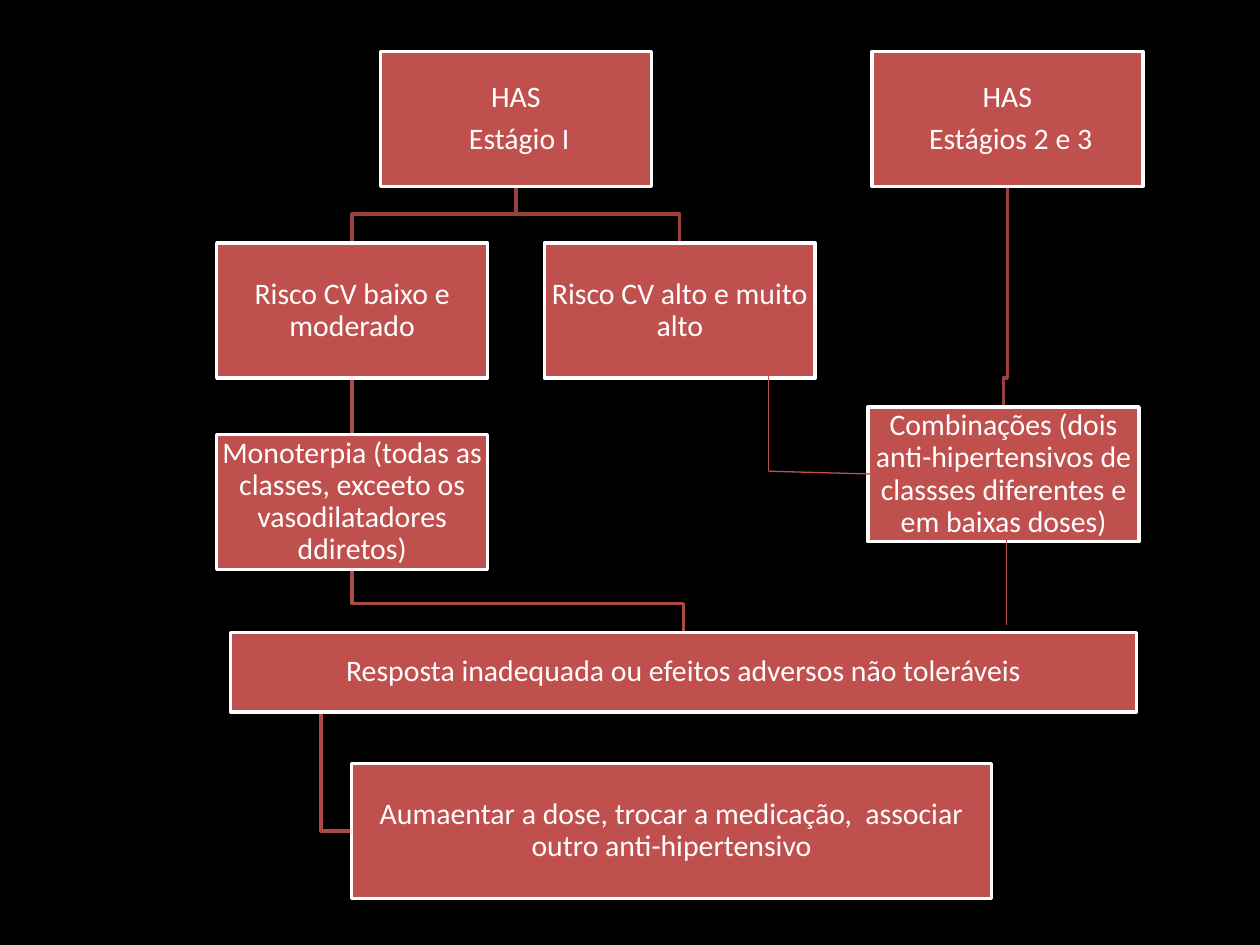
import pptx
import pptx.dml.color
import pptx.enum.shapes
import pptx.enum.text
import pptx.oxml.ns
import pptx.util
from lxml import etree

Inches = pptx.util.Inches
COLORS = {"background": "000000", "box": "C0504D", "white": "FFFFFF",
          "upper_link": "9A403E", "lower_link": "AE4946"}
BOX_W, BOX_H = 2.15, 1.07
BEND_GAP = 0.23

# name: ((left, top, width, height), paragraphs)
BOXES = {
    "stage_1": ((3.02, 0.41, BOX_W, BOX_H), ["HAS", " Estágio I"]),
    "low_risk": ((1.72, 1.93, BOX_W, BOX_H), ["Risco CV baixo e moderado"]),
    "monotherapy": ((1.72, 3.45, BOX_W, BOX_H),
                    ["Monoterpia (todas as classes, exceeto os vasodilatadores ddiretos)"]),
    "response": ((1.83, 5.02, 7.19, 0.63),
                 ["Resposta inadequada ou efeitos adversos não toleráveis"]),
    "action": ((2.79, 6.06, 5.08, BOX_H),
               ["Aumaentar a dose, trocar a medicação,  associar outro anti-hipertensivo"]),
    "high_risk": ((4.32, 1.93, BOX_W, BOX_H), ["Risco CV alto e muito alto"]),
    "stages_2_3": ((6.92, 0.41, BOX_W, BOX_H), ["HAS", " Estágios 2 e 3"]),
    "combinations": ((6.89, 3.23, BOX_W, BOX_H),
                     ["Combinações (dois anti-hipertensivos de classses diferentes e em baixas doses)"]),
}


def rgb(name):
    return pptx.dml.color.RGBColor.from_string(COLORS[name])


def write_text(frame, paragraphs, font="Calibri", size=17, color="white", inset=0.01):
    frame.word_wrap = True
    frame.vertical_anchor = pptx.enum.text.MSO_ANCHOR.MIDDLE
    frame.margin_left = frame.margin_right = Inches(inset)
    frame.margin_top = frame.margin_bottom = Inches(inset)
    for index, content in enumerate(paragraphs):
        paragraph = frame.add_paragraph() if index else frame.paragraphs[0]
        paragraph.alignment = pptx.enum.text.PP_ALIGN.CENTER
        paragraph.line_spacing = 0.9
        paragraph.space_after = pptx.util.Pt(0.35 * size)
        run = paragraph.add_run()
        run.text = content
        run.font.name = font
        run.font.size = pptx.util.Pt(size)
        run.font.color.rgb = rgb(color)


def bottom_center(name):
    left, top, width, height = BOXES[name][0]
    return left + width / 2, top + height


def top_center(name):
    left, top, width, _ = BOXES[name][0]
    return left + width / 2, top


class Flowchart:
    def __init__(self, slide):
        self.slide = slide
        slide.background.fill.solid()
        slide.background.fill.fore_color.rgb = rgb("background")

    def stroke(self, item, color, width):
        item.line.color.rgb = rgb(color)
        item.line.width = pptx.util.Pt(width)

    def box(self, bounds, paragraphs):
        rectangle = self.slide.shapes.add_shape(
            pptx.enum.shapes.MSO_SHAPE.RECTANGLE, *map(Inches, bounds))
        rectangle.shadow.inherit = False
        rectangle.fill.solid()
        rectangle.fill.fore_color.rgb = rgb("box")
        self.stroke(rectangle, "white", 2)
        write_text(rectangle.text_frame, paragraphs)
        return rectangle

    def bent_line(self, points, color):
        start, *rest = [tuple(map(Inches, point)) for point in points]
        builder = self.slide.shapes.build_freeform(*start)
        builder.add_line_segments(rest, close=False)
        bend = builder.convert_to_shape()
        bend.shadow.inherit = False
        bend.fill.background()
        self.stroke(bend, color, 2)

    def elbow(self, parent, child, color):
        """Go down from parent, sideways just above child, then down to child."""
        start, end = bottom_center(parent), top_center(child)
        bend_y = end[1] - BEND_GAP
        self.bent_line([start, (start[0], bend_y), (end[0], bend_y), end], color)

    def straight(self, start, end, color, width):
        link = self.slide.shapes.add_connector(
            pptx.enum.shapes.MSO_CONNECTOR.STRAIGHT, *map(Inches, (*start, *end)))
        self.stroke(link, color, width)
        etree.SubElement(link._element.spPr, pptx.oxml.ns.qn("a:effectLst"))
        return link


def main():
    deck = pptx.Presentation()
    deck.slide_width, deck.slide_height = Inches(10), Inches(7.5)
    chart = Flowchart(deck.slides.add_slide(deck.slide_layouts[6]))

    chart.elbow("stages_2_3", "combinations", "upper_link")
    chart.elbow("stage_1", "high_risk", "upper_link")
    left, top, width, height = BOXES["response"][0]
    action_left, action_top, _, action_height = BOXES["action"][0]
    trunk_x, action_y = left + width / 10, action_top + action_height / 2
    chart.bent_line([(trunk_x, top + height), (trunk_x, action_y), (action_left, action_y)],
                    "lower_link")
    chart.elbow("monotherapy", "response", "lower_link")
    therapy_link = chart.straight(bottom_center("low_risk"), top_center("monotherapy"),
                                  "lower_link", 2)
    chart.elbow("stage_1", "low_risk", "upper_link")

    drawn = {name: chart.box(*content) for name, content in BOXES.items()}
    therapy_link.begin_connect(drawn["low_risk"], 2)
    therapy_link.end_connect(drawn["monotherapy"], 0)

    for start, end in [((6.1, 2.93), (6.1, 3.74)),
                       ((6.1, 3.74), (7.2, 3.77)),
                       ((7.99, 4.26), (7.99, 4.96))]:
        chart.straight(start, end, "box", 0.75)

    deck.save("out.pptx")


if __name__ == "__main__":
    main()
